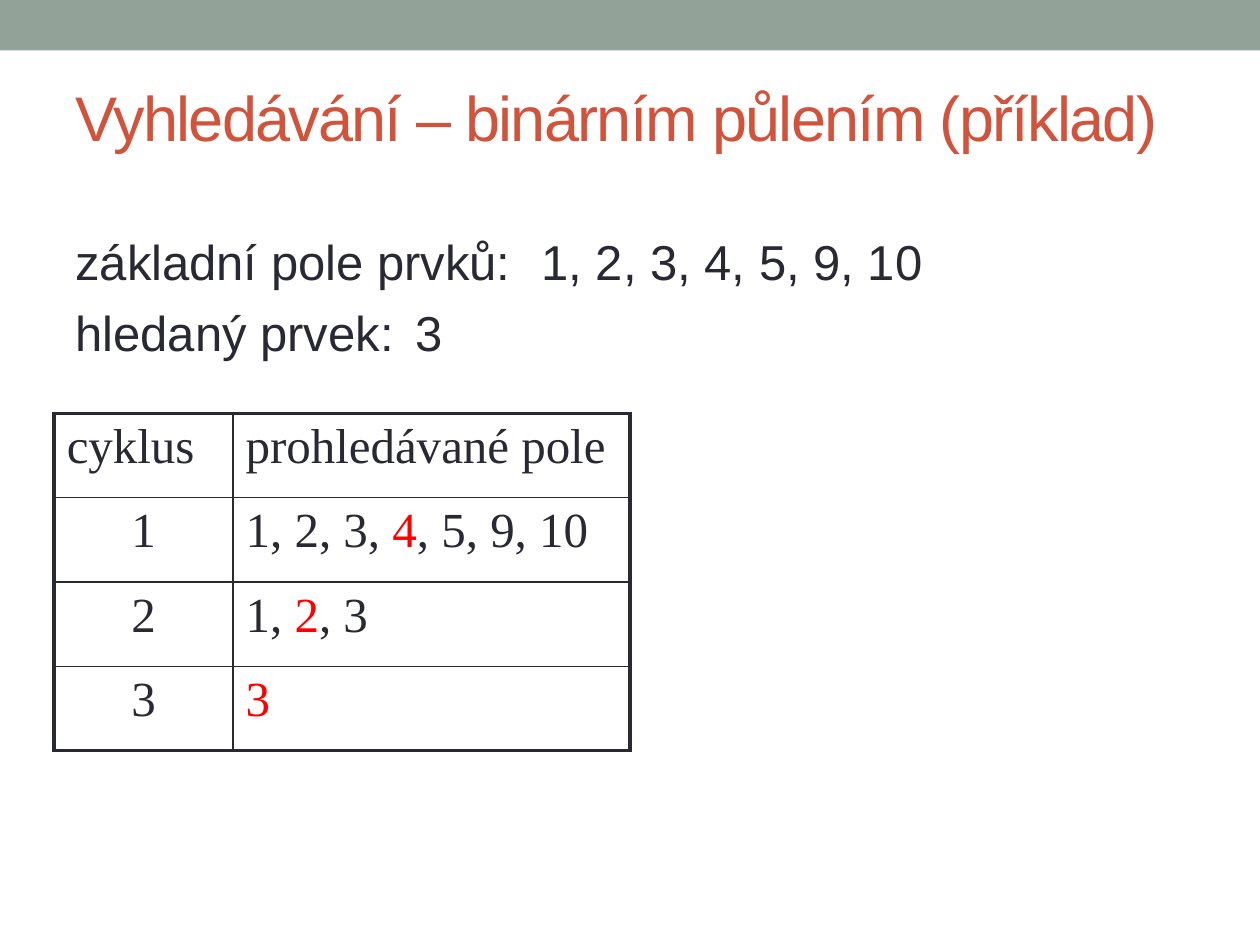
from lxml.etree import SubElement
from pptx import Presentation
from pptx.dml.color import RGBColor
from pptx.enum.shapes import MSO_SHAPE as Shape
from pptx.enum.text import MSO_ANCHOR as Anchor, MSO_AUTO_SIZE as Fit, PP_ALIGN as Align
from pptx.oxml.ns import qn
from pptx.util import Inches, Pt

DARK = RGBColor(0x29, 0x29, 0x34)
RUST = RGBColor(0xD2, 0x53, 0x3C)
SAGE = RGBColor(0x93, 0xA2, 0x99)
RED = RGBColor(0xFF, 0x00, 0x00)


def write(para, text, font="Arial", size=28, color=DARK, align=Align.LEFT, before=0):
    """Fill a paragraph; parts of the text between asterisks turn red."""
    para.alignment = align
    para.space_before = Pt(before)
    for i, part in enumerate(text.split("*")):
        if part:
            run = para.add_run()
            run.text = part
            run.font.name = font
            run.font.size = Pt(size)
            run.font.color.rgb = RED if i % 2 else color
    return para


def edge(cell, side, width):
    """Draw one border of a cell; side is L, R, T or B."""
    line = SubElement(cell._tc.get_or_add_tcPr(), qn(f"a:ln{side}"), w=str(Pt(width)))
    fill = SubElement(line, qn("a:solidFill"))
    SubElement(fill, qn("a:srgbClr"), val=str(DARK))


prs = Presentation()
prs.slide_width, prs.slide_height = Inches(10), Inches(7.5)
slide = prs.slides.add_slide(prs.slide_layouts[5])

# Title and top bar
title = slide.shapes.title
title.left, title.top = Inches(0.5), Inches(0.3)
title.width, title.height = Inches(9), Inches(1.25)
frame = title.text_frame
frame.vertical_anchor = Anchor.MIDDLE
frame.auto_size = Fit.NONE
head = write(frame.paragraphs[0], "Vyhledávání – binárním půlením (příklad)",
             size=36, color=RUST)
head.runs[0].font._element.set("spc", "-100")

bar = slide.shapes.add_shape(Shape.RECTANGLE, 0, 0, prs.slide_width, Inches(0.4))
bar.shadow.inherit = False
bar.fill.solid()
bar.fill.fore_color.rgb = SAGE
bar.line.fill.background()
title.element.addprevious(bar.element)

# Task
box = slide.shapes.add_textbox(Inches(0.5), Inches(1.75), Inches(8.36), Inches(0.58))
frame = box.text_frame
frame.word_wrap = True
frame.margin_top = Inches(0.09)
tasks = ["základní pole prvků:\t1, 2, 3, 4, 5, 9, 10", "hledaný prvek:\t3"]
for i, task in enumerate(tasks):
    para = frame.add_paragraph() if i else frame.paragraphs[0]
    props = write(para, task, before=7)._p.get_or_add_pPr()
    props.set("marL", str(Inches(0.2)))
    props.set("indent", str(Inches(-0.2)))

# Search steps
rows = [
    ("cyklus", "prohledávané pole"),
    ("1", "1, 2, 3, *4*, 5, 9, 10"),
    ("2", "1, *2*, 3"),
    ("3", "*3*"),
]
widths = [1.42, 3.15]
high = 0.67
table = slide.shapes.add_table(len(rows), len(widths), Inches(0.43), Inches(3.28),
                               Inches(sum(widths)), Inches(high * len(rows))).table
table.first_row = table.horz_banding = False
for col, width in zip(table.columns, widths):
    col.width = Inches(width)

for r, row in enumerate(rows):
    table.rows[r].height = Inches(high)
    for c, text in enumerate(row):
        cell = table.cell(r, c)
        outer = {"L": c == 0, "R": c == len(widths) - 1,
                 "T": r == 0, "B": r == len(rows) - 1}
        for side, thick in outer.items():
            edge(cell, side, 2.25 if thick else 1)
        cell.fill.background()
        write(cell.text_frame.paragraphs[0], text, font="Times New Roman",
              align=Align.CENTER if r and c == 0 else Align.LEFT, before=5.6)

prs.save("out.pptx")
